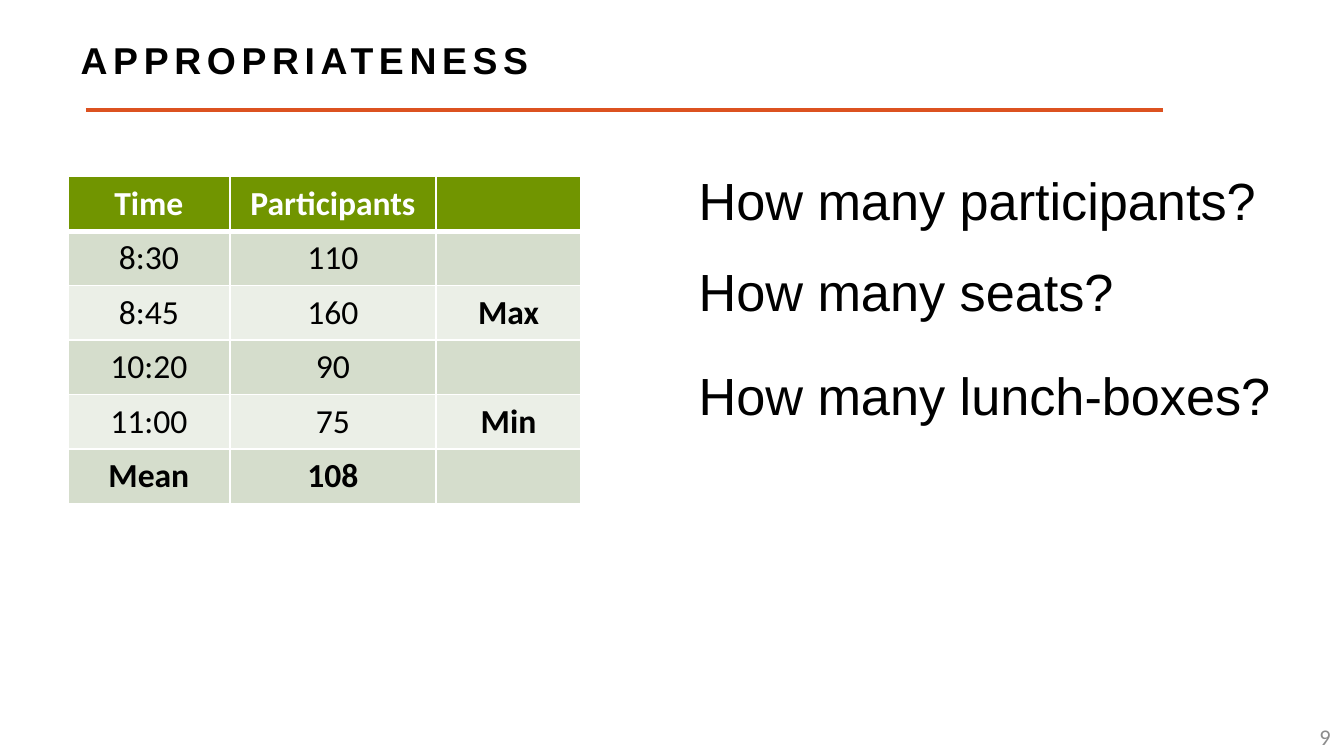
import pptx
import pptx.dml.color
import pptx.enum.shapes
import pptx.enum.text
import pptx.oxml
import pptx.oxml.ns
import pptx.util

Pt = pptx.util.Pt
RGBColor = pptx.dml.color.RGBColor
ALIGN = pptx.enum.text.PP_ALIGN
MIDDLE = pptx.enum.text.MSO_ANCHOR.MIDDLE

BLACK = RGBColor(0x00, 0x00, 0x00)
WHITE = RGBColor(0xFF, 0xFF, 0xFF)
GRAY = RGBColor(0x8C, 0x8C, 0x8C)
ORANGE = RGBColor(0xDC, 0x52, 0x20)
GREEN = RGBColor(0x71, 0x95, 0x00)
BAND_DARK = RGBColor(0xD5, 0xDD, 0xCC)
BAND_LIGHT = RGBColor(0xEB, 0xEF, 0xE7)


def add_run(paragraph, text, size, font, color, bold=False):
    run = paragraph.add_run()
    run.text = text
    run.font.size = Pt(size)
    run.font.name = font
    run.font.color.rgb = color
    run.font.bold = bold
    return run


def add_border(cell, side, width):
    """Draw a white border on one side (L, R, T or B); call before filling the cell."""
    cell._tc.get_or_add_tcPr().append(pptx.oxml.parse_xml(
        f'<a:ln{side} {pptx.oxml.ns.nsdecls("a")} w="{Pt(width)}"><a:solidFill>'
        f'<a:srgbClr val="{WHITE}"/></a:solidFill></a:ln{side}>'))


presentation = pptx.Presentation()
presentation.slide_width = Pt(720)
presentation.slide_height = Pt(405)
slide = presentation.slides.add_slide(presentation.slide_layouts[5])

# Title and rule
title = slide.shapes.title
title.left, title.top, title.width, title.height = Pt(36), Pt(0), Pt(648), Pt(63.4)
title.text_frame.vertical_anchor = MIDDLE
heading = title.text_frame.paragraphs[0]
heading.alignment = ALIGN.LEFT
heading_run = add_run(heading, "APPROPRIATENESS", 20, "Arial", BLACK, True)
heading_run.font._element.set("spc", "300")

rule = slide.shapes.add_connector(
    pptx.enum.shapes.MSO_CONNECTOR.STRAIGHT, Pt(46), Pt(59), Pt(623), Pt(59))
rule.line.color.rgb = ORANGE
rule.line.width = Pt(2)
rule._element.spPr.append(
    pptx.oxml.parse_xml(f'<a:effectLst {pptx.oxml.ns.nsdecls("a")}/>'))

# Attendance table
attendance = [
    ("Time", "Participants", ""),
    ("8:30", "110", ""),
    ("8:45", "160", "Max"),
    ("10:20", "90", ""),
    ("11:00", "75", "Min"),
    ("Mean", "108", ""),
]
column_widths = [86.9, 110.4, 77.7]
row_height = 29.2
table = slide.shapes.add_table(
    len(attendance), len(column_widths), Pt(36.3), Pt(94.6),
    Pt(sum(column_widths)), Pt(row_height * len(attendance))).table
for column, width in zip(table.columns, column_widths):
    column.width = Pt(width)

for row, values in enumerate(attendance):
    table.rows[row].height = Pt(row_height)
    is_header = row == 0
    is_mean = row == len(attendance) - 1
    for column, value in enumerate(values):
        cell = table.cell(row, column)
        for side in "LRTB":
            thick = (is_header and side == "B") or (row == 1 and side == "T")
            add_border(cell, side, 3 if thick else 1)
        cell.fill.solid()
        cell.fill.fore_color.rgb = (
            GREEN if is_header else BAND_DARK if row % 2 else BAND_LIGHT)
        paragraph = cell.text_frame.paragraphs[0]
        paragraph.alignment = ALIGN.CENTER
        if value:
            add_run(paragraph, value, 18, "Calibri", WHITE if is_header else BLACK,
                    is_header or is_mean or column == 2)

# Questions
questions = [
    ("How many participants?", 69.8),
    ("How many seats?", 118.4),
    ("How many lunch-boxes?", 174.4),
]
for question, top in questions:
    question_box = slide.shapes.add_textbox(Pt(367.2), Pt(top), Pt(324), Pt(71.3))
    question_box.text_frame.word_wrap = True
    paragraph = question_box.text_frame.paragraphs[0]
    paragraph.line_spacing = 1.5
    paragraph.space_after = Pt(6)
    add_run(paragraph, question, 28, "Arial", BLACK)

# Page number
page_number = slide.shapes.add_textbox(Pt(552), Pt(384), Pt(168), Pt(21.6))
page_number.text_frame.word_wrap = True
page_number.text_frame.vertical_anchor = MIDDLE
paragraph = page_number.text_frame.paragraphs[0]
paragraph.alignment = ALIGN.RIGHT
add_run(paragraph, "9", 12, "Calibri", GRAY)

presentation.save("out.pptx")
